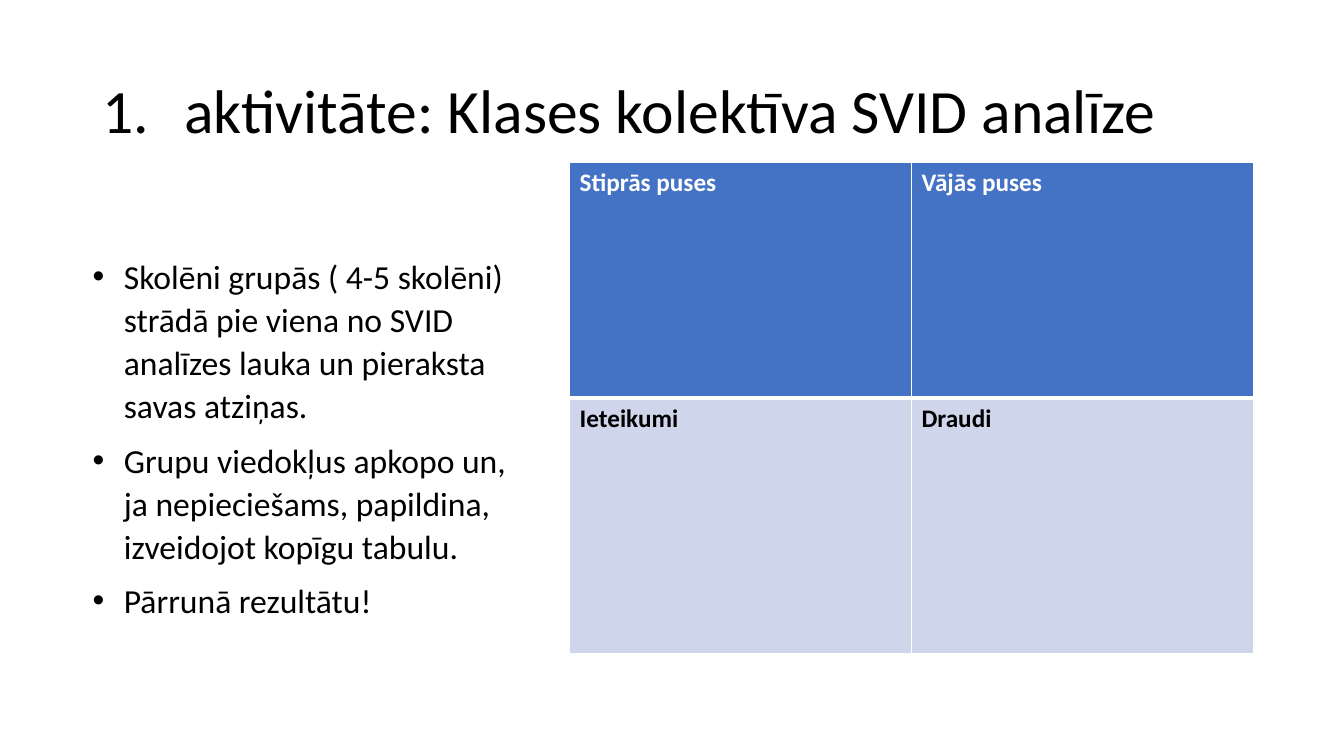
from lxml import etree
from pptx import Presentation
from pptx.dml.color import RGBColor
from pptx.enum.text import MSO_ANCHOR, MSO_AUTO_SIZE
from pptx.oxml.ns import qn
from pptx.util import Inches, Pt

COLORS = {"text": "000000", "white": "FFFFFF", "header": "4472C4", "body": "CFD5EA"}
FONT = "Calibri"


def style_paragraph(paragraph, size, color, bold=False):
    font = paragraph.font
    font.name, font.size, font.bold = FONT, Pt(size), bold
    font.color.rgb = RGBColor.from_string(COLORS[color])


def add_marker(paragraph, indent, tag, **attributes):
    """Give the paragraph a hanging indent with a bullet or number."""
    properties = paragraph._p.get_or_add_pPr()
    properties.set("marL", str(Inches(indent)))
    properties.set("indent", str(-Inches(indent)))
    if tag == "a:buChar":
        etree.SubElement(properties, qn("a:buFont"), typeface="Arial")
    etree.SubElement(properties, qn(tag), **attributes)


presentation = Presentation()
presentation.slide_width = Inches(13.33)
presentation.slide_height = Inches(7.5)
slide = presentation.slides.add_slide(presentation.slide_layouts[6])

# Title
title = slide.shapes.add_textbox(Inches(0.92), Inches(0.4), Inches(11.5), Inches(1.45))
title.text_frame.word_wrap = True
title.text_frame.vertical_anchor = MSO_ANCHOR.MIDDLE
title.text_frame.text = "aktivitāte: Klases kolektīva SVID analīze"
paragraph = title.text_frame.paragraphs[0]
add_marker(paragraph, 0.81, "a:buAutoNum", type="arabicPeriod")
paragraph.line_spacing = 0.9
style_paragraph(paragraph, 44, "text")

# SWOT table
swot_rows = [
    (["Stiprās puses", "Vājās puses"], 2.34, "header", "white"),
    (["Ieteikumi", "Draudi"], 2.53, "body", "text"),
]
table = slide.shapes.add_table(
    2, 2, Inches(5.65), Inches(1.61), Inches(6.78), Inches(4.87)
).table
for row_index, (labels, height, fill, color) in enumerate(swot_rows):
    table.rows[row_index].height = Inches(height)
    widths = {"lnL": 1, "lnR": 1, "lnT": 1, "lnB": 1}
    widths["lnT" if row_index else "lnB"] = 3
    for column_index, label in enumerate(labels):
        cell = table.cell(row_index, column_index)
        cell.text = label
        style_paragraph(cell.text_frame.paragraphs[0], 18, color, bold=True)
        properties = cell._tc.get_or_add_tcPr()
        for side, width in widths.items():
            line = etree.SubElement(properties, qn(f"a:{side}"), w=str(Pt(width)))
            line_fill = etree.SubElement(line, qn("a:solidFill"))
            etree.SubElement(line_fill, qn("a:srgbClr"), val=COLORS["white"])
        cell.fill.solid()
        cell.fill.fore_color.rgb = RGBColor.from_string(COLORS[fill])

# Instructions
steps = [
    "Skolēni grupās ( 4-5 skolēni) strādā pie viena no SVID analīzes lauka un pieraksta savas atziņas.",
    "Grupu viedokļus apkopo un, ja nepieciešams, papildina, izveidojot kopīgu tabulu.",
    "Pārrunā rezultātu!",
]
instructions = slide.shapes.add_textbox(
    Inches(0.82), Inches(2.46), Inches(4.48), Inches(3.76)
)
instructions.text_frame.word_wrap = True
instructions.text_frame.auto_size = MSO_AUTO_SIZE.SHAPE_TO_FIT_TEXT
instructions.text_frame.text = "\n".join(steps)
for paragraph in instructions.text_frame.paragraphs:
    add_marker(paragraph, 0.31, "a:buChar", char="•")
    paragraph.line_spacing = 1.07
    paragraph.space_after = Pt(8)
    style_paragraph(paragraph, 24, "text")

presentation.save("out.pptx")
